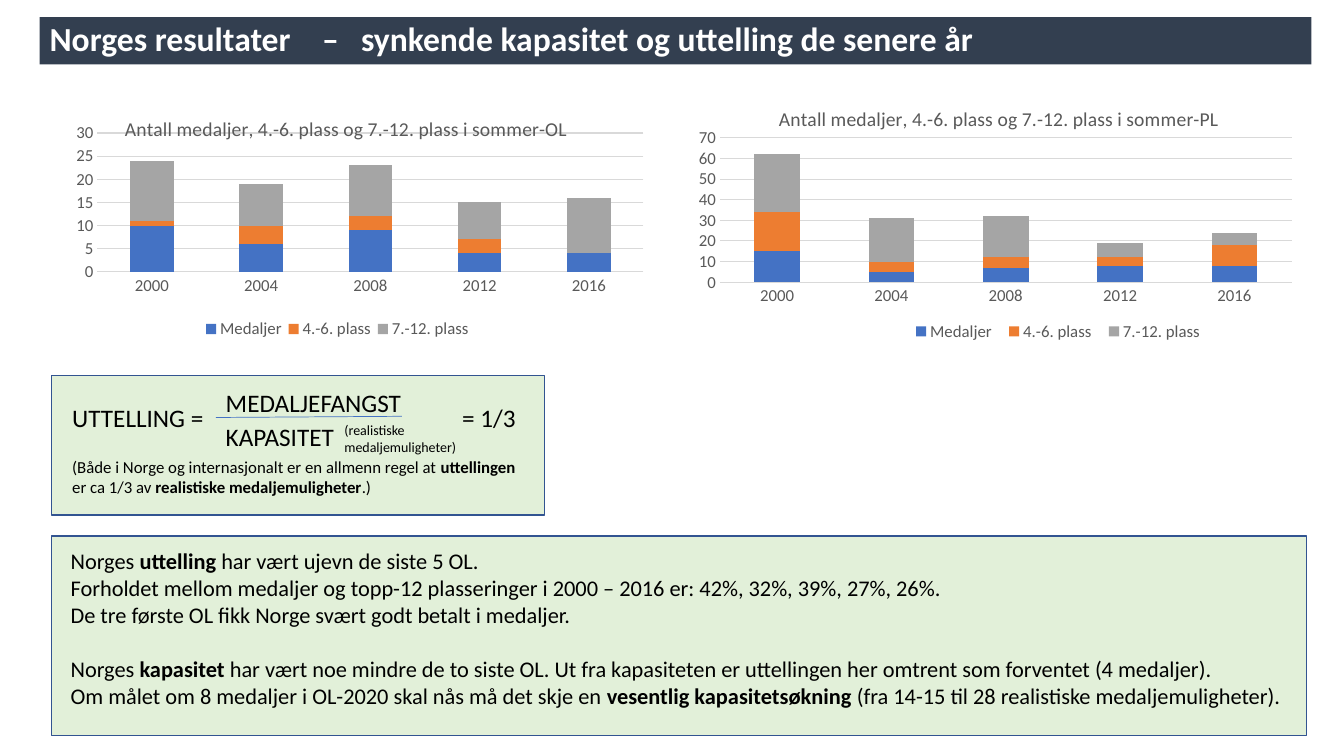
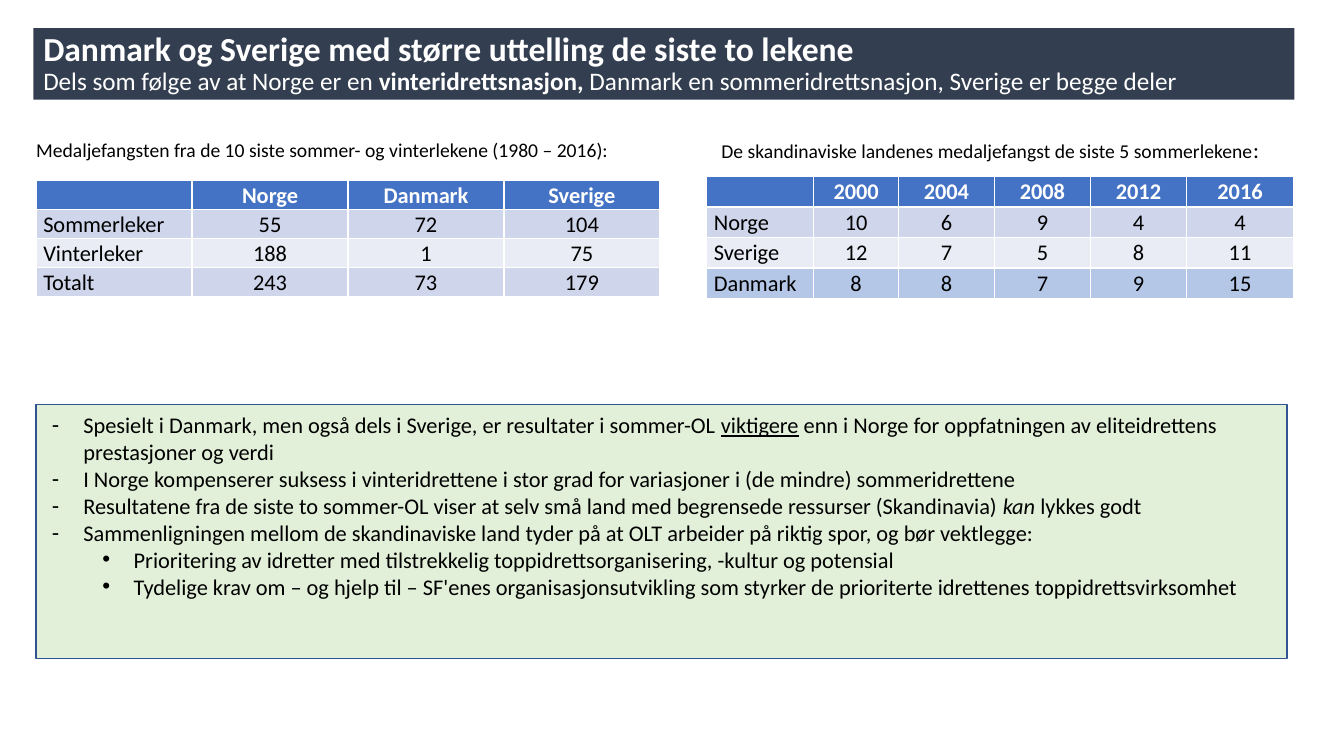
from lxml import etree
from pptx import Presentation
from pptx import util as u
from pptx.chart.data import CategoryChartData
from pptx.dml.color import RGBColor
from pptx.enum import chart as charts, shapes, text
from pptx.oxml import ns

FONT = "Calibri"
NAVY, GREEN, OUTLINE = "333F50", "E2F0D9", "325491"
BLUE, ORANGE, GREY = "4472C4", "ED7D31", "A5A5A5"
BLACK, WHITE, CHART_TEXT, GRID = "000000", "FFFFFF", "595959", "D9D9D9"
ROW_TINTS = "CFD5EA", "E9EBF5"
HIGHLIGHT = "B4C7E7"
YEARS = ["2000", "2004", "2008", "2012", "2016"]
BOLD, ITALIC, UNDERLINE = {"bold": True}, {"italic": True}, {"underline": True}


def colour(value):
    """Turn a hex string into a colour."""
    return RGBColor.from_string(value)


def set_font(font, size, tint, bold=False):
    """Apply the shared typeface with a size and colour."""
    font.name, font.size, font.bold = FONT, u.Pt(size), bold
    font.color.rgb = colour(tint)


def set_fill(shape, tint):
    """Fill a shape or cell with one colour."""
    shape.fill.solid()
    shape.fill.fore_color.rgb = colour(tint)


def set_line(line, tint, width):
    """Give a line its colour and width."""
    line.color.rgb = colour(tint)
    line.width = u.Pt(width)


def place(shape, left, top, width, height):
    """Move and size a shape in centimetres."""
    shape.left, shape.top = u.Cm(left), u.Cm(top)
    shape.width, shape.height = u.Cm(width), u.Cm(height)


def set_margins(frame, left, top):
    """Set equal side margins and equal top and bottom margins."""
    frame.margin_left = frame.margin_right = u.Cm(left)
    frame.margin_top = frame.margin_bottom = u.Cm(top)


def write(frame, paragraphs, size, tint=BLACK):
    """Write paragraphs, each a list of strings or (string, font settings)."""
    for index, runs in enumerate(paragraphs):
        paragraph = frame.paragraphs[0] if index == 0 else frame.add_paragraph()
        set_font(paragraph.font, size, tint)
        paragraph.alignment = text.PP_ALIGN.LEFT
        paragraph.space_before = u.Pt(0)
        for item in runs:
            words, settings = (item, {}) if isinstance(item, str) else item
            run = paragraph.add_run()
            run.text = words
            for name, value in settings.items():
                setattr(run.font, name, value)


def set_bullet(paragraph, mark=None, indent=0, hanging=0):
    """Set or remove the bullet and its indent."""
    properties = paragraph._p.get_or_add_pPr()
    properties.set("marL", str(u.Cm(indent)))
    properties.set("indent", str(-u.Cm(hanging)))
    if mark:
        etree.SubElement(properties, ns.qn("a:buFont")).set("typeface", "Arial")
        etree.SubElement(properties, ns.qn("a:buChar")).set("char", mark)
    else:
        etree.SubElement(properties, ns.qn("a:buNone"))
    defaults = properties.find(ns.qn("a:defRPr"))
    if defaults is not None:
        properties.append(defaults)


def set_tabs(paragraph, *positions):
    """Add left tab stops in centimetres."""
    properties = paragraph._p.get_or_add_pPr()
    stops = etree.Element(ns.qn("a:tabLst"))
    for position in positions:
        stop = etree.SubElement(stops, ns.qn("a:tab"))
        stop.set("pos", str(u.Cm(position)))
        stop.set("algn", "l")
    defaults = properties.find(ns.qn("a:defRPr"))
    defaults.addprevious(stops)


def title_band(slide, area, paragraphs):
    """Turn the title placeholder into the dark band."""
    title = slide.shapes.title
    place(title, *area)
    set_fill(title, NAVY)
    frame = title.text_frame
    frame.auto_size = text.MSO_AUTO_SIZE.NONE
    frame.vertical_anchor = text.MSO_ANCHOR.MIDDLE
    set_margins(frame, 0.25, 0)
    write(frame, paragraphs, 24, WHITE)
    for paragraph in frame.paragraphs:
        paragraph.line_spacing = 0.9
    frame.paragraphs[0].font.bold = True
    return frame.paragraphs


def body_box(slide, area, margins, paragraphs):
    """Turn the body placeholder into the green box."""
    body = slide.placeholders[1]
    place(body, *area)
    set_fill(body, GREEN)
    set_line(body.line, OUTLINE, 1)
    frame = body.text_frame
    frame.auto_size = text.MSO_AUTO_SIZE.NONE
    set_margins(frame, *margins)
    write(frame, paragraphs, 16)
    return frame.paragraphs


def text_box(slide, area, paragraphs, size):
    """Add a text box that keeps its lines unbroken."""
    frame = slide.shapes.add_textbox(*map(u.Cm, area)).text_frame
    frame.word_wrap = False
    write(frame, paragraphs, size)


def set_layout(element, index, inner=False, **fractions):
    """Place a chart part by fractions of the chart area."""
    for previous in element.findall(ns.qn("c:layout")):
        element.remove(previous)
    layout = etree.Element(ns.qn("c:layout"))
    manual = etree.SubElement(layout, ns.qn("c:manualLayout"))
    settings = {"layoutTarget": "inner"} if inner else {}
    settings.update(xMode="edge", yMode="edge", **fractions)
    for name, value in settings.items():
        etree.SubElement(manual, ns.qn(f"c:{name}")).set("val", str(value))
    element.insert(index, layout)


def medal_chart(slide, area, title, values, top, step, layouts):
    """Add a stacked column chart of placings per year."""
    data = CategoryChartData()
    data.categories = YEARS
    for name, numbers in zip(("Medaljer", "4.-6. plass", "7.-12. plass"), values):
        data.add_series(name, numbers)
    chart = slide.shapes.add_chart(
        charts.XL_CHART_TYPE.COLUMN_STACKED, *map(u.Cm, area), data).chart
    set_font(chart.font, 12, CHART_TEXT)

    chart.has_title = True
    frame = chart.chart_title.text_frame
    frame.text = title
    set_font(frame.paragraphs[0].font, 14, CHART_TEXT)
    chart.has_legend = True
    chart.legend.position = charts.XL_LEGEND_POSITION.BOTTOM
    chart.legend.include_in_layout = False
    set_font(chart.legend.font, 12, CHART_TEXT)

    plot = chart.plots[0]
    plot.gap_width, plot.overlap, plot.vary_by_categories = 150, 100, False
    for series, tint in zip(plot.series, (BLUE, ORANGE, GREY)):
        set_fill(series.format, tint)
    for axis in (chart.category_axis, chart.value_axis):
        axis.major_tick_mark = axis.minor_tick_mark = charts.XL_TICK_MARK.NONE
        set_font(axis.tick_labels.font, 12, CHART_TEXT)
    set_line(chart.category_axis.format.line, GRID, 0.75)
    scale = chart.value_axis
    scale.minimum_scale, scale.maximum_scale, scale.major_unit = 0, top, step
    scale.format.line.fill.background()
    set_line(scale.major_gridlines.format.line, GRID, 0.75)

    title_layout, plot_layout, legend_layout = layouts
    set_layout(chart.chart_title._element, 1, **title_layout)
    set_layout(plot._element.getparent(), 0, inner=True, **plot_layout)
    set_layout(chart.legend._element, 1, **legend_layout)


def medal_table(slide, area, widths, rows, tints):
    """Add a table with a blue header and tinted rows."""
    table = slide.shapes.add_table(len(rows), len(widths), *map(u.Cm, area)).table
    for column, width in zip(table.columns, widths):
        column.width = u.Cm(width)
    for row_index, (values, tint) in enumerate(zip(rows, (BLUE, *tints))):
        table.rows[row_index].height = u.Cm(area[3] / len(rows))
        header = row_index == 0
        for column_index, value in enumerate(values):
            cell = table.cell(row_index, column_index)
            set_fill(cell, tint)
            set_margins(cell, 0.18, 0)
            cell.text = value
            paragraph = cell.text_frame.paragraphs[0]
            paragraph.line_spacing = 1.07
            if column_index:
                paragraph.alignment = text.PP_ALIGN.CENTER
            set_font(paragraph.font, 16, WHITE if header else BLACK, header)


def payoff_formula(slide):
    """Draw the framed formula for medal payoff."""
    frame = slide.shapes.add_shape(
        shapes.MSO_SHAPE.RECTANGLE, *map(u.Cm, (1.3, 9.47, 12.42, 3.51)))
    frame.shadow.inherit = False
    set_fill(frame, GREEN)
    set_line(frame.line, OUTLINE, 1)
    rule = slide.shapes.add_connector(
        shapes.MSO_CONNECTOR.STRAIGHT, *map(u.Cm, (10.13, 10.49, 5.44, 10.52)))
    set_line(rule.line, BLUE, 0.5)
    etree.SubElement(rule._element.spPr, ns.qn("a:effectLst"))
    for area, words in (
            ((1.57, 10.01, 4.01, 1.02), "UTTELLING ="),
            ((5.44, 10.49, 3.25, 1.02), "KAPASITET"),
            ((5.44, 9.63, 4.98, 1.02), "MEDALJEFANGST"),
            ((11.4, 10.01, 1.88, 1.02), "= 1/3")):
        text_box(slide, area, [[words]], 18)
    text_box(slide, (8.43, 10.49, 3.38, 1.1),
             [["(realistiske"], ["medaljemuligheter)"]], 10)
    text_box(slide, (1.57, 11.38, 11.86, 1.27), [
        ["(Både i Norge og internasjonalt er en allmenn regel at ", ("uttellingen", BOLD)],
        ["er ca 1/3 av ", ("realistiske medaljemuligheter", BOLD), ".)"]], 12)


def results_slide(slide):
    """Build the slide on Norway's results."""
    heading = title_band(slide, (1, 0.43, 32.05, 1.19), [
        ["Norges resultater\t–\tsynkende kapasitet og uttelling de senere år"]])
    set_tabs(heading[0], 6.87, 7.85)
    findings = body_box(slide, (1.3, 13.51, 31.62, 5.03), (0.48, 0.28), [
        ["Norges ", ("uttelling", BOLD), " har vært ujevn de siste 5 OL."],
        ["Forholdet mellom medaljer og topp-12 plasseringer i 2000 – 2016 er: "
         "42%, 32%, 39%, 27%, 26%."],
        ["De tre første OL fikk Norge svært godt betalt i medaljer."],
        ["Norges ", ("kapasitet", BOLD), " har vært noe mindre de to siste OL. "
         "Ut fra kapasiteten er uttellingen her omtrent som forventet (4 medaljer)."],
        ["Om målet om 8 medaljer i OL-2020 skal nås må det skje en",
         (" vesentlig kapasitetsøkning ", BOLD),
         "(fra 14-15 til 28 realistiske medaljemuligheter)."]])
    for paragraph in findings:
        set_bullet(paragraph)
    findings[3].space_before = u.Pt(19.5)
    title = "Antall medaljer, 4.-6. plass og 7.-12. plass i sommer-"
    medal_chart(slide, (17.37, 2.24, 15.49, 6.5), title + "PL",
                ([15, 5, 7, 8, 8], [19, 5, 5, 4, 10], [28, 21, 20, 7, 6]), 70, 10,
                ({"x": 0.14, "y": 0.05}, {"x": 0.05, "y": 0.19, "w": 0.93, "h": 0.56},
                 {"x": 0.35, "y": 0.89, "w": 0.5, "h": 0.1}))
    medal_chart(slide, (1.09, 2.46, 15.14, 6.86), title + "OL",
                ([10, 6, 9, 4, 4], [1, 4, 3, 3, 0], [13, 9, 11, 8, 12]), 30, 5,
                ({"x": 0.13, "y": 0.05}, {"x": 0.09, "y": 0.13, "w": 0.91, "h": 0.51},
                 {"x": 0.26, "y": 0.8, "w": 0.46, "h": 0.1}))
    payoff_formula(slide)


def comparison_slide(slide):
    """Build the slide comparing the Scandinavian countries."""
    heading = title_band(slide, (0.84, 0.71, 31.78, 1.8), [
        ["Danmark og Sverige med større uttelling de siste to lekene"],
        ["Dels som følge av at Norge er en ", ("vinteridrettsnasjon,", BOLD),
         " Danmark en sommeridrettsnasjon, Sverige er begge deler"]])
    heading[1].font.size = u.Pt(18)
    points = body_box(slide, (0.91, 10.19, 31.52, 6.4), (0.4, 0.18), [
        ["Spesielt i Danmark, men også dels i Sverige, er resultater i sommer-OL ",
         ("viktigere", UNDERLINE),
         " enn i Norge for oppfatningen av eliteidrettens prestasjoner og verdi"],
        ["I Norge kompenserer suksess i vinteridrettene i stor grad for variasjoner i "
         "(de mindre) sommeridrettene"],
        ["Resultatene fra de siste to sommer-OL viser at selv små land med begrensede "
         "ressurser (Skandinavia) ", ("kan", ITALIC), " lykkes godt"],
        ["Sammenligningen mellom de skandinaviske land tyder på at OLT arbeider på "
         "riktig spor, og bør vektlegge:"],
        ["Prioritering av idretter med tilstrekkelig toppidrettsorganisering, "
         "-kultur og potensial"],
        ["Tydelige krav om – og hjelp til – SF'enes organisasjonsutvikling som styrker "
         "de prioriterte idrettenes toppidrettsvirksomhet"]])
    for index, paragraph in enumerate(points):
        paragraph.level = int(index > 3)
        mark, indent = ("•", 2.06) if paragraph.level else ("-", 0.79)
        set_bullet(paragraph, mark, indent, 0.79)
    text_box(slide, (17.93, 3.3, 14.3, 0.94), [
        ["De skandinaviske landenes medaljefangst de siste 5 sommerlekene",
         (":", {"size": u.Pt(16)})]], 14)
    text_box(slide, (0.66, 3.35, 17.12, 0.86), [
        ["Medaljefangsten fra de 10 siste sommer- og vinterlekene (1980 – 2016):"]], 14)
    medal_table(slide, (17.81, 4.45, 14.79, 3.07), (2.7, 2.13, 2.42, 2.42, 2.42, 2.7), [
        ["", *YEARS],
        ["Norge", "10", "6", "9", "4", "4"],
        ["Sverige", "12", "7", "5", "8", "11"],
        ["Danmark", "8", "8", "7", "9", "15"]], (*ROW_TINTS, HIGHLIGHT))
    medal_table(slide, (0.91, 4.55, 15.72, 2.92), [3.93] * 4, [
        ["", "Norge", "Danmark", "Sverige"],
        ["Sommerleker", "55", "72", "104"],
        ["Vinterleker", "188", "1", "75"],
        ["Totalt", "243", "73", "179"]], (*ROW_TINTS, ROW_TINTS[0]))


def main():
    """Build and save the presentation."""
    presentation = Presentation()
    presentation.slide_width, presentation.slide_height = u.Cm(33.87), u.Cm(19.05)
    for build in (results_slide, comparison_slide):
        build(presentation.slides.add_slide(presentation.slide_layouts[1]))
    presentation.save("out.pptx")


if __name__ == "__main__":
    main()
